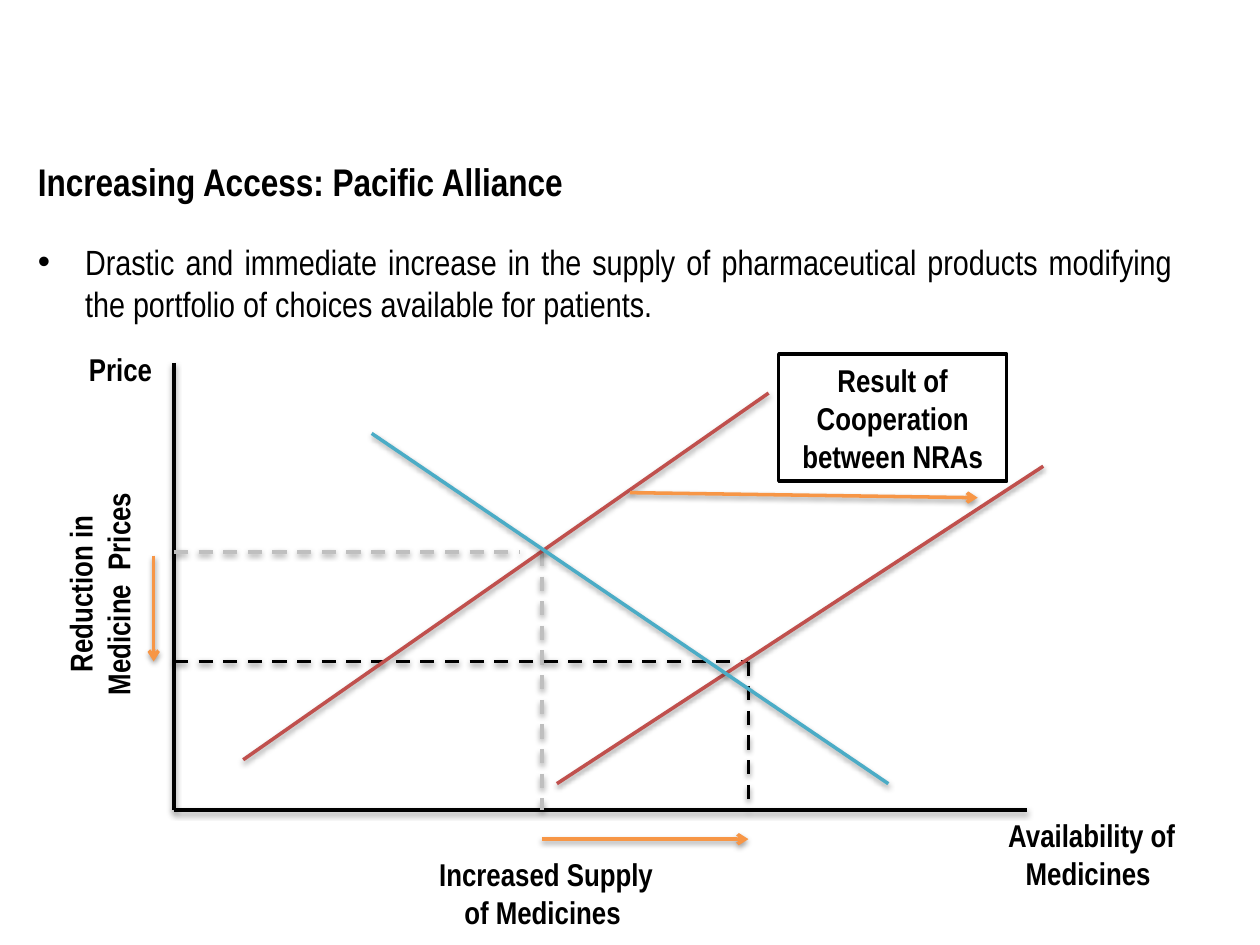
"""Build a supply and demand slide on access to medicines."""

from dataclasses import dataclass

from lxml.etree import SubElement
from pptx import Presentation
from pptx.dml.color import RGBColor
from pptx.enum.dml import MSO_LINE_DASH_STYLE as Dash
from pptx.enum.shapes import MSO_CONNECTOR as Connector, MSO_SHAPE as Preset
from pptx.enum.text import MSO_ANCHOR as Anchor, MSO_AUTO_SIZE as AutoSize, PP_ALIGN as Align
from pptx.oxml.ns import qn
from pptx.shapes.base import BaseShape
from pptx.slide import Slide
from pptx.text.text import TextFrame
from pptx.util import Inches, Pt


@dataclass(frozen=True)
class Theme:
    """Colours, font and sizes of the slide."""

    font: str = "Arial Narrow"
    title_size: int = 22
    body_size: int = 20
    label_size: int = 18
    line_width: int = 2
    ink: str = "000000"
    paper: str = "FFFFFF"
    muted: str = "BFBFBF"
    supply: str = "C0504D"
    demand: str = "4BACC6"
    change: str = "F79646"


@dataclass(frozen=True)
class Segment:
    """A straight line of the diagram, in inches."""

    start: tuple[float, float]
    end: tuple[float, float]
    color: str
    dashed: bool = False
    arrow: bool = False


@dataclass(frozen=True)
class Label:
    """A centred bold text box, in inches."""

    text: str
    box: tuple[float, float, float, float]
    rotation: int = 0


THEME = Theme()
AXIS_X, AXIS_Y = 1.38, 6.43
OLD_QUANTITY, NEW_QUANTITY = 4.3, 5.94
OLD_PRICE, NEW_PRICE = 4.38, 5.25

SEGMENTS = [
    Segment((AXIS_X, 2.88), (AXIS_X, AXIS_Y), THEME.ink),
    Segment((AXIS_X, AXIS_Y), (8.15, AXIS_Y), THEME.ink),
    Segment((AXIS_X, OLD_PRICE), (4.13, OLD_PRICE), THEME.muted, dashed=True),
    Segment((OLD_QUANTITY, OLD_PRICE), (OLD_QUANTITY, AXIS_Y), THEME.muted, dashed=True),
    Segment((AXIS_X, NEW_PRICE), (NEW_QUANTITY, NEW_PRICE), THEME.ink, dashed=True),
    Segment((NEW_QUANTITY, NEW_PRICE), (NEW_QUANTITY, AXIS_Y), THEME.ink, dashed=True),
    Segment((1.93, 6.03), (6.1, 3.12), THEME.supply),
    Segment((4.42, 6.22), (8.28, 3.7), THEME.supply),
    Segment((7.05, 6.22), (2.95, 3.44), THEME.demand),
    Segment((5, 3.91), (7.76, 3.95), THEME.change, arrow=True),
    Segment((OLD_QUANTITY, 6.66), (NEW_QUANTITY, 6.66), THEME.change, arrow=True),
    Segment((1.22, 4.41), (1.22, NEW_PRICE), THEME.change, arrow=True),
]

LABELS = [
    Label("Price ", (0.59, 2.73, 0.79, 0.4)),
    Label("Reduction in Medicine  Prices", (-0.33, 4.36, 2.24, 0.71), rotation=270),
    Label("Availability of Medicines ", (7.6, AXIS_Y, 2.13, 0.71)),
    Label("Increased Supply of Medicines ", (3.27, 6.74, 2.13, 0.71)),
]


def rgb(color: str) -> RGBColor:
    """Return the colour for a hexadecimal string."""
    return RGBColor.from_string(color)


def place(shape: BaseShape, box: tuple[float, float, float, float]) -> None:
    """Move and size a shape in inches."""
    shape.left, shape.top, shape.width, shape.height = map(Inches, box)


def write(frame: TextFrame, text: str, size: int, align: Align, bold: bool = True) -> None:
    """Fill a text frame with one formatted paragraph."""
    frame.text = text
    frame.word_wrap = True
    paragraph = frame.paragraphs[0]
    paragraph.alignment = align
    paragraph.space_before = Pt(0)
    font = paragraph.runs[0].font
    font.name, font.size, font.bold = THEME.font, Pt(size), bold
    font.color.rgb = rgb(THEME.ink)


def draw_segment(slide: Slide, segment: Segment) -> None:
    """Draw a line that keeps the soft shadow of the theme."""
    points = map(Inches, (*segment.start, *segment.end))
    line = slide.shapes.add_connector(Connector.STRAIGHT, *points).line
    line.color.rgb = rgb(segment.color)
    line.width = Pt(THEME.line_width)
    if segment.dashed:
        line.dash_style = Dash.DASH
    if segment.arrow:
        SubElement(line._get_or_add_ln(), qn("a:tailEnd"), type="arrow")


def draw_label(slide: Slide, label: Label) -> None:
    """Draw a centred label."""
    shape = slide.shapes.add_textbox(*map(Inches, label.box))
    shape.rotation = label.rotation
    write(shape.text_frame, label.text, THEME.label_size, Align.CENTER)
    shape.text_frame.auto_size = AutoSize.SHAPE_TO_FIT_TEXT


def draw_result(slide: Slide) -> None:
    """Draw the framed result."""
    shape = slide.shapes.add_shape(Preset.RECTANGLE, *map(Inches, (6.18, 2.81, 1.81, 1.01)))
    shape.shadow.inherit = False
    shape.fill.solid()
    shape.fill.fore_color.rgb = rgb(THEME.paper)
    shape.line.color.rgb = rgb(THEME.ink)
    shape.line.width = Pt(THEME.line_width)
    write(shape.text_frame, "Result of Cooperation between NRAs", THEME.label_size, Align.CENTER)
    shape.text_frame.auto_size = AutoSize.SHAPE_TO_FIT_TEXT


def fill_placeholders(slide: Slide) -> None:
    """Fill the title and the bullet."""
    title, body = slide.shapes.title, slide.placeholders[1]
    place(title, (0.2, 1.23, 9.06, 0.42))
    write(title.text_frame, "Increasing Access: Pacific Alliance", THEME.title_size, Align.LEFT)
    title.text_frame.vertical_anchor = Anchor.MIDDLE
    title.text_frame.auto_size = AutoSize.NONE

    place(body, (0.2, 1.86, 9.21, 0.77))
    text = (
        "Drastic and immediate increase in the supply of pharmaceutical products "
        "modifying the portfolio of choices available for patients. "
    )
    write(body.text_frame, text, THEME.body_size, Align.JUSTIFY, bold=False)
    body.text_frame.auto_size = AutoSize.SHAPE_TO_FIT_TEXT


def main() -> None:
    """Build and save the presentation."""
    presentation = Presentation()
    presentation.slide_width, presentation.slide_height = Inches(10), Inches(7.5)
    slide = presentation.slides.add_slide(presentation.slide_layouts[1])
    fill_placeholders(slide)
    for segment in SEGMENTS:
        draw_segment(slide, segment)
    for label in LABELS:
        draw_label(slide, label)
    draw_result(slide)
    presentation.save("out.pptx")


if __name__ == "__main__":
    main()
